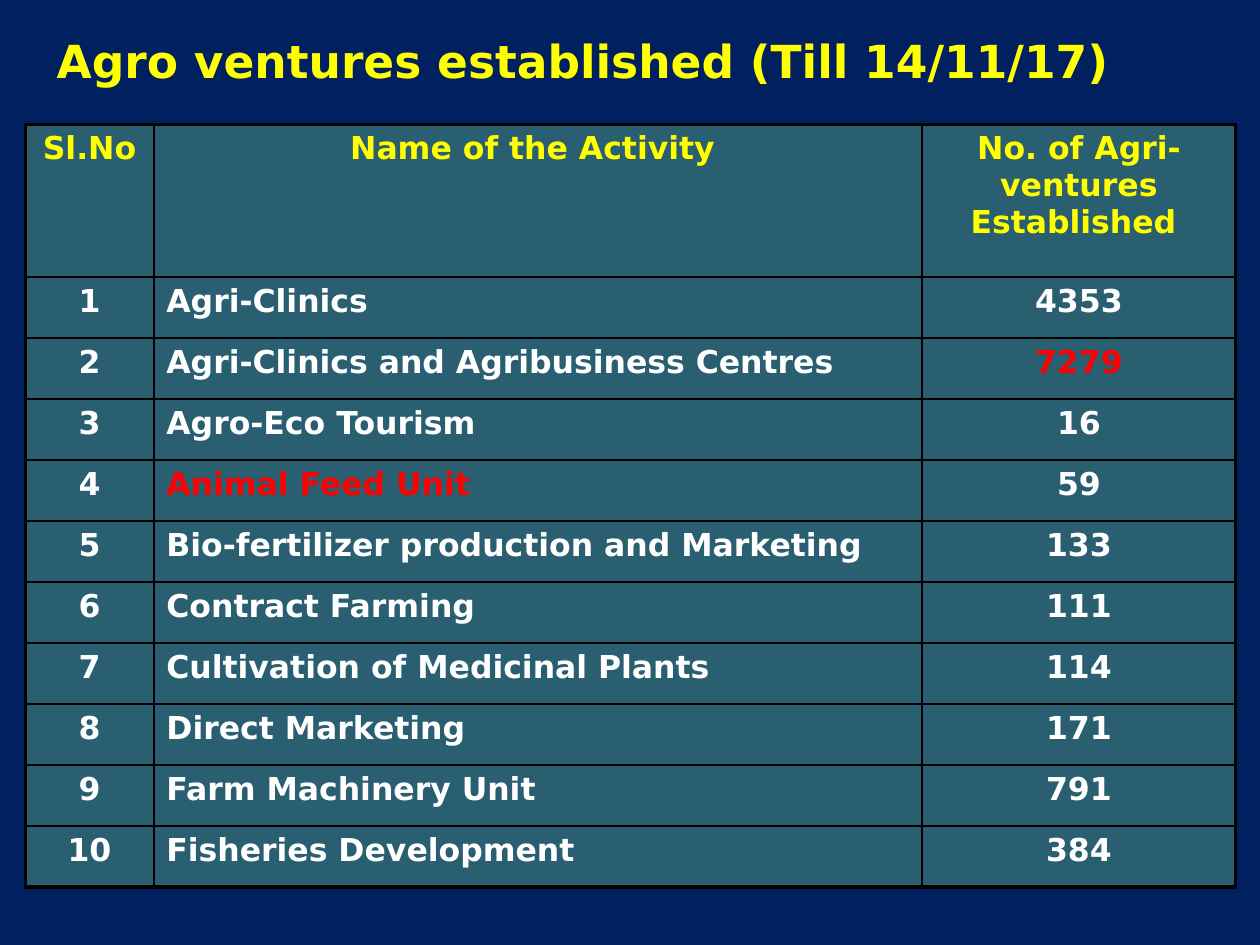
from lxml.etree import SubElement
from pptx import Presentation
from pptx.dml.color import RGBColor
from pptx.enum.text import MSO_ANCHOR, PP_ALIGN as Align
from pptx.oxml.ns import qn
from pptx.util import Cm, Pt

NAVY = RGBColor(0x00, 0x20, 0x60)
TEAL = RGBColor(0x29, 0x5F, 0x71)
YELLOW = RGBColor(0xFF, 0xFF, 0x00)
WHITE = RGBColor(0xFF, 0xFF, 0xFF)
RED = RGBColor(0xFF, 0x00, 0x00)
BLACK = RGBColor(0x00, 0x00, 0x00)

FONT = "DejaVu Sans"
OUTER, INNER = Pt(2.25), Pt(1)
HEADINGS = ("Sl.No", "Name of the Activity ", "No. of Agri-ventures Established ")
VENTURES = (
    ("Agri-Clinics", 4353),
    ("Agri-Clinics and Agribusiness Centres", 7279),
    ("Agro-Eco Tourism", 16),
    ("Animal Feed Unit", 59),
    ("Bio-fertilizer production and Marketing", 133),
    ("Contract Farming", 111),
    ("Cultivation of Medicinal Plants", 114),
    ("Direct Marketing", 171),
    ("Farm Machinery Unit", 791),
    ("Fisheries Development", 384),
)
HIGHLIGHTS = {"7279", "Animal Feed Unit"}
COLUMN_WIDTHS = (Cm(2.59), Cm(15.49), Cm(6.32))
HEADER_HEIGHT, ROW_HEIGHT = Cm(3.07), Cm(1.23)


def format_text(frame, size, color, align):
    paragraph = frame.paragraphs[0]
    paragraph.alignment = align
    font = paragraph.font
    font.name, font.size, font.bold = FONT, Pt(size), True
    font.color.rgb = color
    return paragraph


def add_title(slide, text):
    title = slide.shapes.title
    title.left, title.top = Cm(0.89), Cm(0.53)
    title.width, title.height = Cm(23.22), Cm(1.37)
    title.text_frame.text = text
    title.text_frame.vertical_anchor = MSO_ANCHOR.MIDDLE
    format_text(title.text_frame, 26, YELLOW, Align.LEFT)


def set_borders(cell, **widths):
    properties = cell._tc.get_or_add_tcPr()
    for side, width in widths.items():
        line = SubElement(properties, qn(f"a:ln{side}"), w=str(width))
        fill = SubElement(line, qn("a:solidFill"))
        SubElement(fill, qn("a:srgbClr"), val=str(BLACK))


def fill_cell(cell, text, color, align):
    cell.text = text
    format_text(cell.text_frame, 18, color, align).space_before = Pt(2.5)
    cell.fill.solid()
    cell.fill.fore_color.rgb = TEAL


def add_ventures_table(slide):
    rows = [HEADINGS] + [
        (str(number), activity, str(count))
        for number, (activity, count) in enumerate(VENTURES, 1)
    ]
    last_row, last_column = len(rows) - 1, len(HEADINGS) - 1
    table = slide.shapes.add_table(
        len(rows), len(HEADINGS), Cm(0.51), Cm(2.51),
        sum(COLUMN_WIDTHS), HEADER_HEIGHT + ROW_HEIGHT * last_row,
    ).table
    for column, width in zip(table.columns, COLUMN_WIDTHS):
        column.width = width
    for r, texts in enumerate(rows):
        table.rows[r].height = ROW_HEIGHT if r else HEADER_HEIGHT
        for c, text in enumerate(texts):
            cell = table.cell(r, c)
            set_borders(
                cell,
                L=INNER if c else OUTER,
                R=OUTER if c == last_column else INNER,
                T=INNER if r else OUTER,
                B=OUTER if r == last_row else INNER,
            )
            body_color = RED if text in HIGHLIGHTS else WHITE
            align = Align.LEFT if r and c == 1 else Align.CENTER
            fill_cell(cell, text, body_color if r else YELLOW, align)


def main():
    presentation = Presentation()
    presentation.slide_width, presentation.slide_height = Cm(25.4), Cm(19.05)
    slide = presentation.slides.add_slide(presentation.slide_layouts[5])
    slide.background.fill.solid()
    slide.background.fill.fore_color.rgb = NAVY
    add_title(slide, "Agro ventures established (Till 14/11/17)")
    add_ventures_table(slide)
    presentation.save("out.pptx")


if __name__ == "__main__":
    main()
